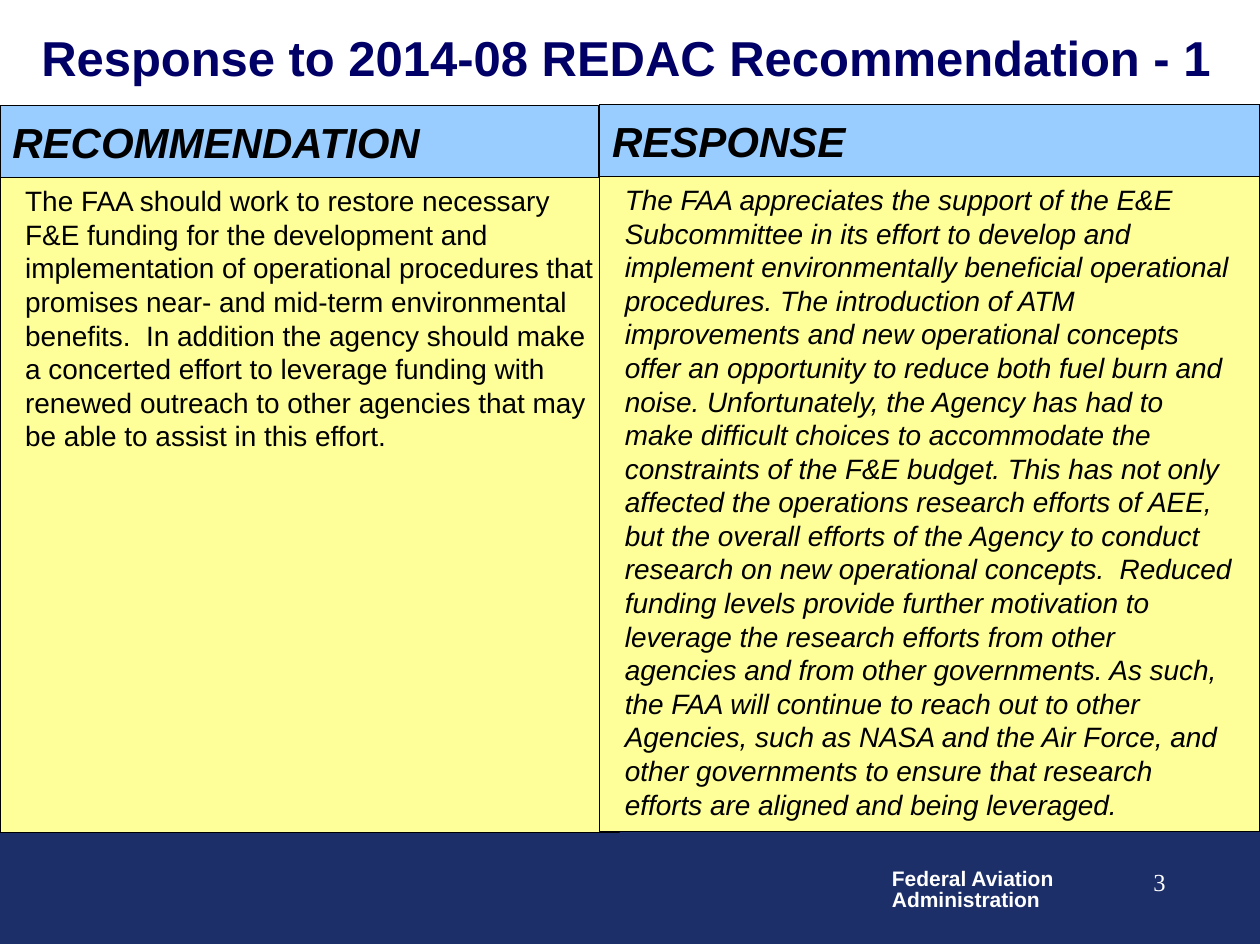
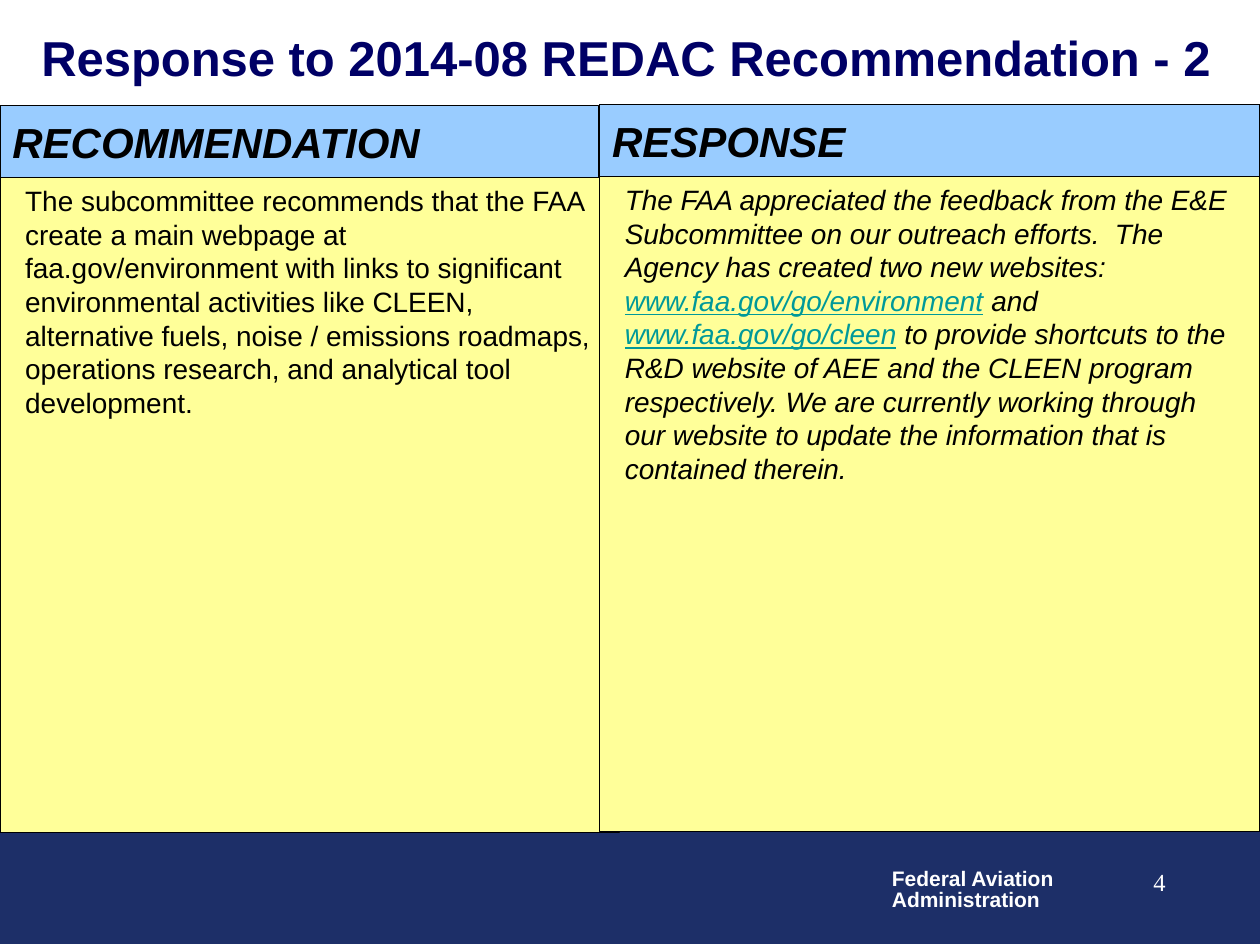
from dataclasses import dataclass

from pptx import Presentation
from pptx.dml.color import RGBColor
from pptx.enum import shapes, text
from pptx.util import Pt


@dataclass(frozen=True)
class Theme:
    navy: str = "1D2F68"
    title: str = "000066"
    head: str = "99CCFF"
    body: str = "FFFF99"
    ink: str = "000000"
    link: str = "009999"
    white: str = "FFFFFF"
    sans: str = "Arial"
    serif: str = "Times New Roman"
    title_size: float = 28
    head_size: float = 24
    body_size: float = 16
    page_size: float = 14
    foot_size: float = 12
    edge: float = 0.75


THEME = Theme()


@dataclass(frozen=True)
class Box:
    left: float
    top: float
    width: float
    height: float

    def lengths(self) -> tuple:
        return Pt(self.left), Pt(self.top), Pt(self.width), Pt(self.height)


@dataclass(frozen=True)
class Style:
    size: float
    color: str = THEME.ink
    face: str = THEME.sans
    bold: bool = False
    slant: bool = False


@dataclass(frozen=True)
class Column:
    label: str
    head: Box
    body: Box
    slant: bool


@dataclass(frozen=True)
class Page:
    number: int
    title: str
    advice: tuple[str, ...]
    reply: tuple[str, ...]


WIDE, HIGH = 720, 540
BAND = Box(0, 475.2, WIDE, 64.1)
TITLE = Box(16.5, 8.6, 694, 48.2)
AGENCY = Box(502.6, 493.2, 108, 31.7)
NUMBER = Box(523.4, 491.8, 149.8, 36)
SPLIT = 342.7
HEAD_HIGH, BODY_HIGH = 41, 374.4

COLUMNS = (
    Column("RECOMMENDATION", Box(0, 60.5, 342, HEAD_HIGH),
           Box(0, 101.5, 354.2, BODY_HIGH), False),
    Column("RESPONSE", Box(SPLIT, 59.8, WIDE - SPLIT, HEAD_HIGH),
           Box(SPLIT, 100.8, WIDE - SPLIT, BODY_HIGH), True),
)

TITLE_STYLE = Style(THEME.title_size, THEME.title, bold=True)
HEAD_STYLE = Style(THEME.head_size, bold=True, slant=True)
AGENCY_STYLE = Style(THEME.foot_size, THEME.white, bold=True)
NUMBER_STYLE = Style(THEME.page_size, THEME.white, THEME.serif)

PAGES = (
    Page(
        3, "Response to 2014-08 REDAC Recommendation - 1",
        ("The FAA should work to restore necessary F&E funding for the "
         "development and implementation of operational procedures that "
         "promises near- and mid-term environmental benefits.  In addition "
         "the agency should make a concerted effort to leverage funding with "
         "renewed outreach to other agencies that may be able to assist in "
         "this effort.",),
        ("The FAA appreciates the support of the E&E Subcommittee in its "
         "effort to develop and implement environmentally beneficial "
         "operational procedures. The introduction of ATM improvements and "
         "new operational concepts offer an opportunity to reduce both fuel "
         "burn and noise. Unfortunately, the Agency has had to make difficult "
         "choices to accommodate the constraints of the F&E budget. ",
         "This has not only affected the operations research efforts of AEE, "
         "but the overall efforts of the Agency to conduct research on new "
         "operational concepts.  Reduced funding levels provide further "
         "motivation to leverage the research efforts from other agencies and "
         "from other governments. As such, the FAA will continue to reach out "
         "to other Agencies, such as NASA and the Air Force, and other "
         "governments to ensure that research efforts are aligned and being "
         "leveraged."),
    ),
    Page(
        4, "Response to 2014-08 REDAC Recommendation - 2",
        ("The subcommittee recommends that the FAA create a main webpage at "
         "faa.gov/environment with links to significant environmental "
         "activities like CLEEN, alternative fuels, noise / emissions "
         "roadmaps, operations research, and analytical tool development.",),
        ("The FAA appreciated the feedback from the E&E Subcommittee on our "
         "outreach efforts.  The Agency has created two new websites: ",
         "www.faa.gov/go/environment",
         " and ",
         "www.faa.gov/go/cleen",
         " to provide shortcuts to the R&D website of AEE and the CLEEN "
         "program respectively. We are currently working through our website "
         "to update the information that is contained therein."),
    ),
)


def paint(font, style: Style) -> None:
    font.name, font.size = style.face, Pt(style.size)
    font.bold, font.italic = style.bold, style.slant
    font.color.rgb = RGBColor.from_string(style.color)


def set_frame(frame, anchor=text.MSO_ANCHOR.TOP, wrap: bool = True,
              side: float = 7.2) -> None:
    frame.word_wrap, frame.vertical_anchor = wrap, anchor
    frame.margin_left = frame.margin_right = Pt(side)
    frame.margin_top = frame.margin_bottom = Pt(3.6)


def write(frame, words: str, style: Style, align=text.PP_ALIGN.LEFT,
          pitch: float = 1.0) -> None:
    frame.text = words
    for para in frame.paragraphs:
        para.alignment, para.line_spacing = align, pitch
        for run in para.runs:
            paint(run.font, style)


def write_parts(frame, parts: tuple[str, ...], style: Style) -> None:
    """Write one paragraph whose web addresses are coloured and underlined."""
    para = frame.paragraphs[0]
    para.alignment = text.PP_ALIGN.LEFT
    for part in parts:
        run = para.add_run()
        run.text = part
        paint(run.font, style)
        if part.startswith("www."):
            run.font.underline = True
            run.font.color.rgb = RGBColor.from_string(THEME.link)


def add_panel(slide, box: Box, fill: str, edge: str):
    panel = slide.shapes.add_shape(shapes.MSO_SHAPE.RECTANGLE, *box.lengths())
    panel.shadow.inherit = False
    panel.fill.solid()
    panel.fill.fore_color.rgb = RGBColor.from_string(fill)
    panel.line.color.rgb = RGBColor.from_string(edge)
    panel.line.width = Pt(THEME.edge)
    return panel


def add_label(slide, box: Box, words: str, style: Style,
              anchor=text.MSO_ANCHOR.TOP, wrap: bool = True,
              align=text.PP_ALIGN.LEFT, pitch: float = 1.0) -> None:
    frame = slide.shapes.add_textbox(*box.lengths()).text_frame
    set_frame(frame, anchor, wrap)
    write(frame, words, style, align, pitch)


def add_base(slide, page: Page) -> None:
    """Draw the footer band, agency name, page number and title."""
    add_panel(slide, BAND, THEME.navy, THEME.navy)
    add_label(slide, AGENCY, "Federal Aviation\nAdministration", AGENCY_STYLE,
              wrap=False, pitch=0.85)
    add_label(slide, NUMBER, str(page.number), NUMBER_STYLE,
              align=text.PP_ALIGN.RIGHT)
    add_label(slide, TITLE, page.title, TITLE_STYLE, text.MSO_ANCHOR.MIDDLE)


def add_column(slide, column: Column, parts: tuple[str, ...]) -> None:
    body = add_panel(slide, column.body, THEME.body, THEME.ink).text_frame
    set_frame(body, side=14.4)
    write_parts(body, parts, Style(THEME.body_size, slant=column.slant))
    head = add_panel(slide, column.head, THEME.head, THEME.ink).text_frame
    set_frame(head, text.MSO_ANCHOR.MIDDLE, wrap=False)
    write(head, column.label, HEAD_STYLE)


def main() -> None:
    deck = Presentation()
    deck.slide_width, deck.slide_height = Pt(WIDE), Pt(HIGH)
    for page in PAGES:
        slide = deck.slides.add_slide(deck.slide_layouts[6])
        add_base(slide, page)
        for column, parts in zip(COLUMNS, (page.advice, page.reply)):
            add_column(slide, column, parts)
    deck.save("out.pptx")


if __name__ == "__main__":
    main()
